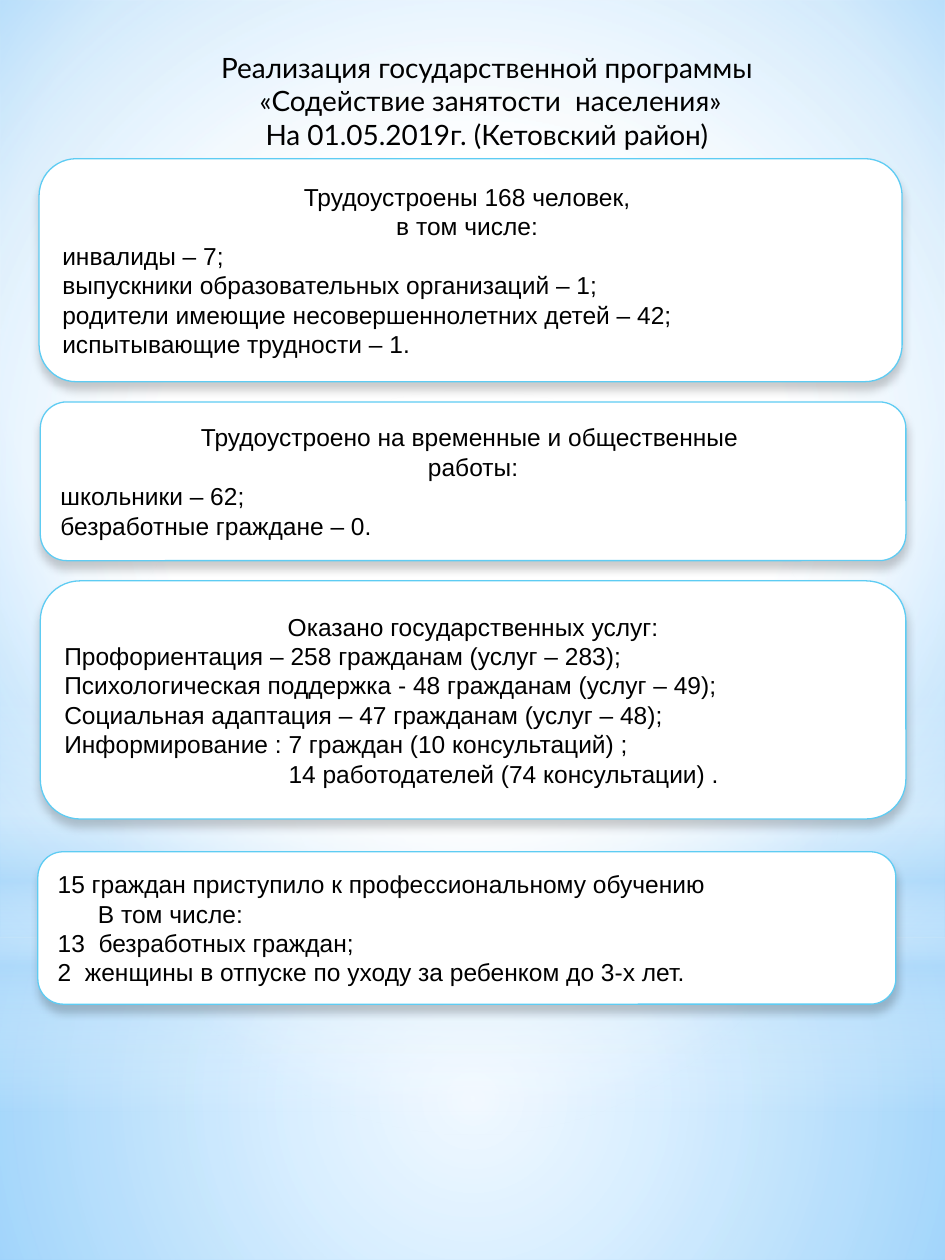
from lxml import etree
from pptx import Presentation
from pptx.dml.color import RGBColor
from pptx.enum.shapes import MSO_SHAPE
from pptx.enum.text import MSO_ANCHOR, PP_ALIGN
from pptx.oxml.ns import qn
from pptx.util import Inches, Pt

RECTANGLE, ELLIPSE = MSO_SHAPE.RECTANGLE, MSO_SHAPE.OVAL
ROUNDED = MSO_SHAPE.ROUNDED_RECTANGLE
LEFT, CENTER = PP_ALIGN.LEFT, PP_ALIGN.CENTER
MIDDLE = MSO_ANCHOR.MIDDLE
MIDPOINT = (50, 50, 50, 50)


def color(value):
    return RGBColor.from_string(value)


def add_xml(parent, tag, **attributes):
    values = {name: str(value) for name, value in attributes.items()}
    return etree.SubElement(parent, qn(tag), values)


def add_color(parent, value, opacity):
    node = add_xml(parent, "a:srgbClr", val=value)
    add_xml(node, "a:alpha", val=opacity * 1000)


class ReportSlide:
    black, white, border = "000000", "FFFFFF", "5ECCF3"
    title_font, body_font = "Lato", "Arial"
    title_size, body_size = 16, 14

    def __init__(self, presentation):
        self.slide = presentation.slides.add_slide(presentation.slide_layouts[6])

    def set_gradient(self, owner, stops, focus=None, angle=0):
        """Stops are (position %, colour, opacity %); a focus makes it radial."""
        gradient = owner.find(".//" + qn("a:gradFill"))
        for child in list(gradient):
            gradient.remove(child)
        stop_list = add_xml(gradient, "a:gsLst")
        for position, value, opacity in stops:
            add_color(add_xml(stop_list, "a:gs", pos=position * 1000), value, opacity)
        if focus:
            radial = add_xml(gradient, "a:path", path="circle")
            sides = {side: part * 1000 for side, part in zip("ltrb", focus)}
            add_xml(radial, "a:fillToRect", **sides)
        else:
            add_xml(gradient, "a:lin", ang=angle * 60000, scaled=0)

    def background(self, stops, focus):
        self.slide.background.fill.gradient()
        self.set_gradient(self.slide._element, stops, focus)

    def add_shape(self, kind, left, top, width, height):
        shape = self.slide.shapes.add_shape(
            kind, Inches(left), Inches(top), Inches(width), Inches(height))
        shape.shadow.inherit = False
        return shape

    def glow(self, kind, top, height, stops, focus=None, angle=0):
        shape = self.add_shape(kind, 0, top, 7.5, height)
        shape.line.fill.background()
        shape.fill.gradient()
        self.set_gradient(shape._element.spPr, stops, focus, angle)

    def fill_text(self, frame, lines, font, size):
        """Lines are (text, alignment, left indent in inches)."""
        frame.word_wrap = True
        for index, (text, alignment, indent) in enumerate(lines):
            paragraph = frame.add_paragraph() if index else frame.paragraphs[0]
            paragraph.text = text
            paragraph.alignment = alignment
            paragraph.font.name = font
            paragraph.font.size = Pt(size)
            paragraph.font.color.rgb = color(self.black)
            if indent:
                paragraph._p.get_or_add_pPr().set("marL", str(Inches(indent)))

    def title(self, left, top, width, height, lines):
        box = self.slide.shapes.add_textbox(
            Inches(left), Inches(top), Inches(width), Inches(height))
        self.fill_text(box.text_frame, [(line, CENTER, 0) for line in lines],
                       self.title_font, self.title_size)

    def panel(self, left, top, width, height, lines):
        shape = self.add_shape(ROUNDED, left, top, width, height)
        shape.fill.solid()
        shape.fill.fore_color.rgb = color(self.white)
        shape.line.color.rgb = color(self.border)
        shape.line.width = Pt(0.75)
        effects = shape._element.spPr.find(qn("a:effectLst"))
        shadow = add_xml(effects, "a:outerShdw", blurRad=Pt(5), dist=Pt(4),
                         dir=90 * 60000, rotWithShape=0)
        add_color(shadow, self.black, 20)
        shape.text_frame.vertical_anchor = MIDDLE
        self.fill_text(shape.text_frame, lines, self.body_font, self.body_size)


def main():
    presentation = Presentation()
    presentation.slide_width = Inches(7.5)
    presentation.slide_height = Inches(10)
    report = ReportSlide(presentation)

    # Background and soft glows
    white, sky = "FFFFFF", "B4DCFA"
    report.background([(0, white, 100), (60, white, 100), (100, "5BB9FF", 100)],
                      (20, 10, 20, 60))
    report.glow(RECTANGLE, 7.44, 2.56,
                [(0, white, 91), (37, white, 76), (100, sky, 79)], MIDPOINT)
    report.glow(RECTANGLE, 0, 7.44,
                [(0, white, 89), (48, white, 62), (100, sky, 79)], MIDPOINT)
    report.glow(RECTANGLE, 5.49, 3.33,
                [(0, white, 0), (29, white, 30), (45, sky, 40),
                 (55, white, 26), (65, sky, 60), (100, white, 0)], angle=90)
    report.glow(ELLIPSE, 2.33, 7.44, [(0, white, 100), (56, white, 0)], MIDPOINT)

    # Title
    report.title(0.52, 0.35, 6.69, 0.91, [
        "Реализация государственной программы",
        " «Содействие занятости  населения»",
        "На 01.05.2019г. (Кетовский район)"])

    # Employment
    report.panel(0.31, 1.26, 6.85, 1.77, [
        ("Трудоустроены 168 человек, ", CENTER, 0),
        ("в том числе: ", CENTER, 0),
        ("инвалиды – 7;", LEFT, 0),
        ("выпускники образовательных организаций – 1;", LEFT, 0),
        ("родители имеющие несовершеннолетних детей – 42;", LEFT, 0),
        ("испытывающие трудности – 1.", LEFT, 0)])

    # Temporary and public works
    report.panel(0.32, 3.19, 6.87, 1.26, [
        ("Трудоустроено на временные и общественные ", CENTER, 0),
        ("работы:", CENTER, 0),
        ("школьники – 62;", LEFT, 0),
        ("безработные граждане – 0.", LEFT, 0)])

    # Public services
    report.panel(0.32, 4.61, 6.87, 1.89, [
        ("Оказано государственных услуг:", CENTER, 0),
        ("Профориентация – 258 гражданам (услуг – 283);", LEFT, 0),
        ("Психологическая поддержка - 48 гражданам (услуг – 49);", LEFT, 0),
        ("Социальная адаптация – 47 гражданам (услуг – 48);", LEFT, 0),
        ("Информирование : 7 граждан (10 консультаций) ;", LEFT, 0),
        ("14 работодателей (74 консультации) .", LEFT, 1.78)])

    # Vocational training
    report.panel(0.3, 6.76, 6.81, 1.21, [
        ("15 граждан приступило к профессиональному обучению", LEFT, 0),
        ("В том числе:", LEFT, 0.32),
        ("13  безработных граждан;", LEFT, 0),
        ("2  женщины в отпуске по уходу за ребенком до 3-х лет.", LEFT, 0)])

    presentation.save("out.pptx")


if __name__ == "__main__":
    main()
